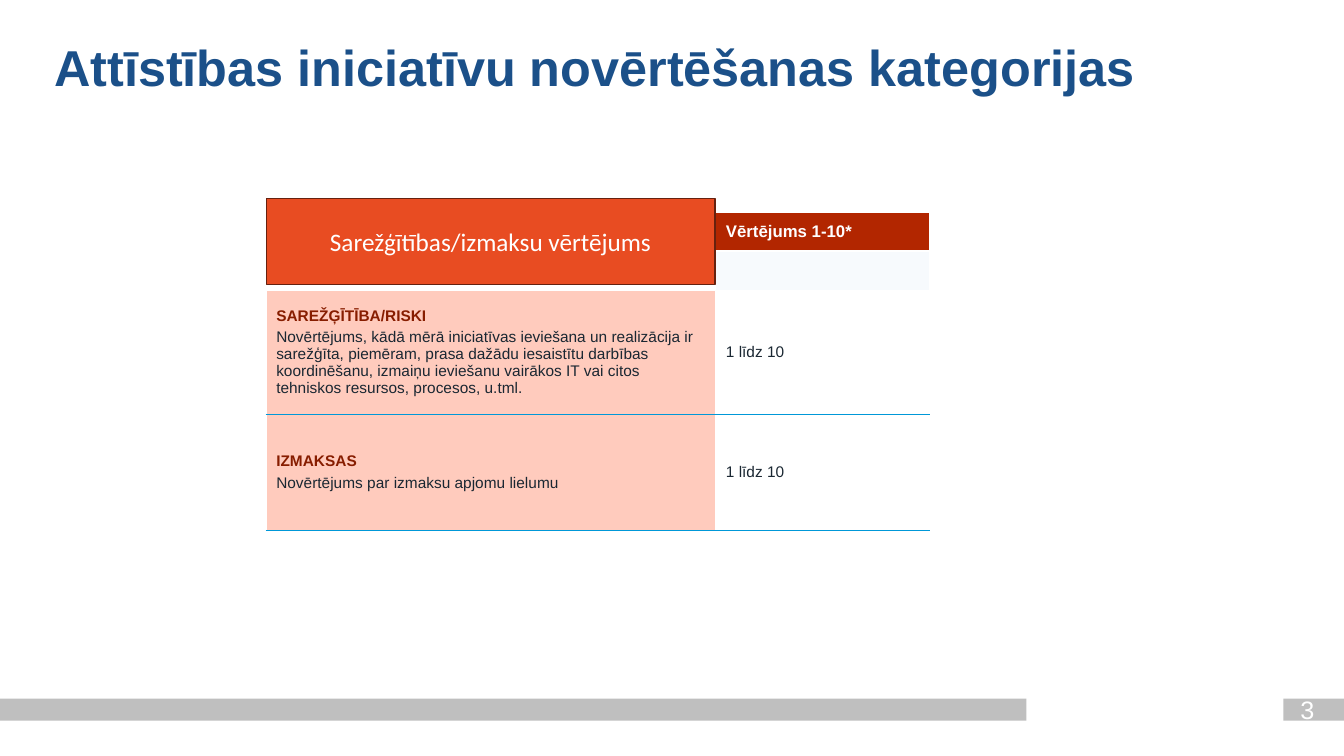
from lxml.etree import SubElement
from pptx import Presentation
from pptx.dml.color import RGBColor
from pptx.enum.shapes import MSO_SHAPE
from pptx.enum.text import MSO_ANCHOR, PP_ALIGN
from pptx.oxml.ns import qn
from pptx.util import Inches, Pt

SIZE = (13.33, 7.5)
TITLE = "Attīstības iniciatīvu novērtēšanas kategorijas"
LABEL = "Sarežģītības/izmaksu vērtējums"
PAGE = "3"
SCORE = "Vērtējums 1-10*"
RANGE = "1 līdz 10"
ITEMS = [
    ("SAREŽĢĪTĪBA/RISKI",
     "Novērtējums, kādā mērā iniciatīvas ieviešana un realizācija ir sarežģīta, "
     "piemēram, prasa dažādu iesaistītu darbības koordinēšanu, izmaiņu ieviešanu "
     "vairākos IT vai citos tehniskos resursos, procesos, u.tml."),
    ("IZMAKSAS", "Novērtējums par izmaksu apjomu lielumu"),
]
COLS = (4.46, 2.12)
ROWS = (0.38, 0.39, 1.23, 1.15)
LEFT, TOP = 2.64, 2.11
BAND = (6.93, 0.22)
BARS = [(0, 10.18), (12.73, 0.6)]

WHITE, BLUE, GREY = "FFFFFF", "0098D8", "BFBFBF"
FORMS = {
    "title": {"size": 36, "bold": True, "color": "1B5089"},
    "page": {"size": 18, "color": WHITE},
    "label": {"size": 18, "color": WHITE, "name": "Calibri"},
    "score": {"size": 12, "bold": True, "color": WHITE},
    "head": {"size": 11, "bold": True, "color": "871D00"},
    "body": {"size": 11, "color": "1A2732"},
}
MID = {"align": PP_ALIGN.CENTER}
GAP = {"space_after": Pt(3)}


def tint(code):
    return RGBColor.from_string(code)


def apply(item, form):
    for key, value in form.items():
        setattr(item, key, value)


def write(frame, lines, para):
    frame.word_wrap = True
    for num, (text, kind) in enumerate(lines):
        line = frame.add_paragraph() if num else frame.paragraphs[0]
        apply(line, para)
        run = line.add_run()
        run.text = text
        form = {"name": "Arial", "bold": False, **FORMS[kind]}
        run.font.color.rgb = tint(form.pop("color"))
        form["size"] = Pt(form["size"])
        apply(run.font, form)


def paint(item, code):
    if code:
        item.fill.solid()
        item.fill.fore_color.rgb = tint(code)
    else:
        item.fill.background()


def block(slide, box, code, edge=None):
    shape = slide.shapes.add_shape(MSO_SHAPE.RECTANGLE, *map(Inches, box))
    shape.shadow.inherit = False
    paint(shape, code)
    if edge:
        shape.line.color.rgb = tint(edge)
        shape.line.width = Pt(1)
    else:
        shape.line.fill.background()
    return shape


def label(slide, box, text, kind, anchor, para):
    frame = slide.shapes.add_textbox(*map(Inches, box)).text_frame
    frame.vertical_anchor = anchor
    write(frame, [(text, kind)], para)


def border(cell, sides):
    props = cell._tc.get_or_add_tcPr()
    for spot, (side, (code, width)) in enumerate(sides.items()):
        line = SubElement(props, qn(f"a:ln{side}"), w=str(Pt(width)))
        SubElement(SubElement(line, qn("a:solidFill")), qn("a:srgbClr"), val=code)
        props.insert(spot, line)


def grid(slide):
    rows = [[([], None), ([(SCORE, "score")], "B22600")],
            [([], None), ([], "F7FAFD")]]
    for head, body in ITEMS:
        rows.append([([(head, "head"), (body, "body")], "FFCBBD"),
                     ([(RANGE, "body")], None)])
    box = (LEFT, TOP, sum(COLS), sum(ROWS))
    table = slide.shapes.add_table(len(ROWS), len(COLS), *map(Inches, box)).table
    apply(table, {"first_row": False, "horz_banding": False})
    for col, width in zip(table.columns, COLS):
        col.width = Inches(width)
    thin, thick, rule = (WHITE, 1), (WHITE, 3), (BLUE, 0.75)
    for r, cells in enumerate(rows):
        table.rows[r].height = Inches(ROWS[r])
        for c, (lines, code) in enumerate(cells):
            cell = table.cell(r, c)
            cell.vertical_anchor = MSO_ANCHOR.MIDDLE
            paint(cell, code)
            if lines:
                write(cell.text_frame, lines, MID if c else GAP)
            else:
                apply(cell, {"margin_top": 0, "margin_bottom": 0})
            split = thin if c else thick
            edges = (thin, split, thin, rule, rule)
            border(cell, {"L": thin, "R": thin, "T": edges[r], "B": edges[r + 1]})


def main():
    """Build the slide of rating categories."""
    deck = Presentation()
    deck.slide_width, deck.slide_height = map(Inches, SIZE)
    slide = deck.slides.add_slide(deck.slide_layouts[6])
    for left, width in BARS:
        block(slide, (left, BAND[0], width, BAND[1]), GREY)
    label(slide, (12.8, 6.84, 0.53, 0.36), PAGE, "page", MSO_ANCHOR.TOP, MID)
    label(slide, (0.44, 0.1, 12.47, 1.2), TITLE, "title", MSO_ANCHOR.MIDDLE,
          {"line_spacing": 0.9})
    grid(slide)
    plate = block(slide, (LEFT, 1.97, 4.45, 0.85), "E84C22", "66210F")
    plate.text_frame.vertical_anchor = MSO_ANCHOR.MIDDLE
    write(plate.text_frame, [(LABEL, "label")], MID)
    deck.save("out.pptx")


if __name__ == "__main__":
    main()
